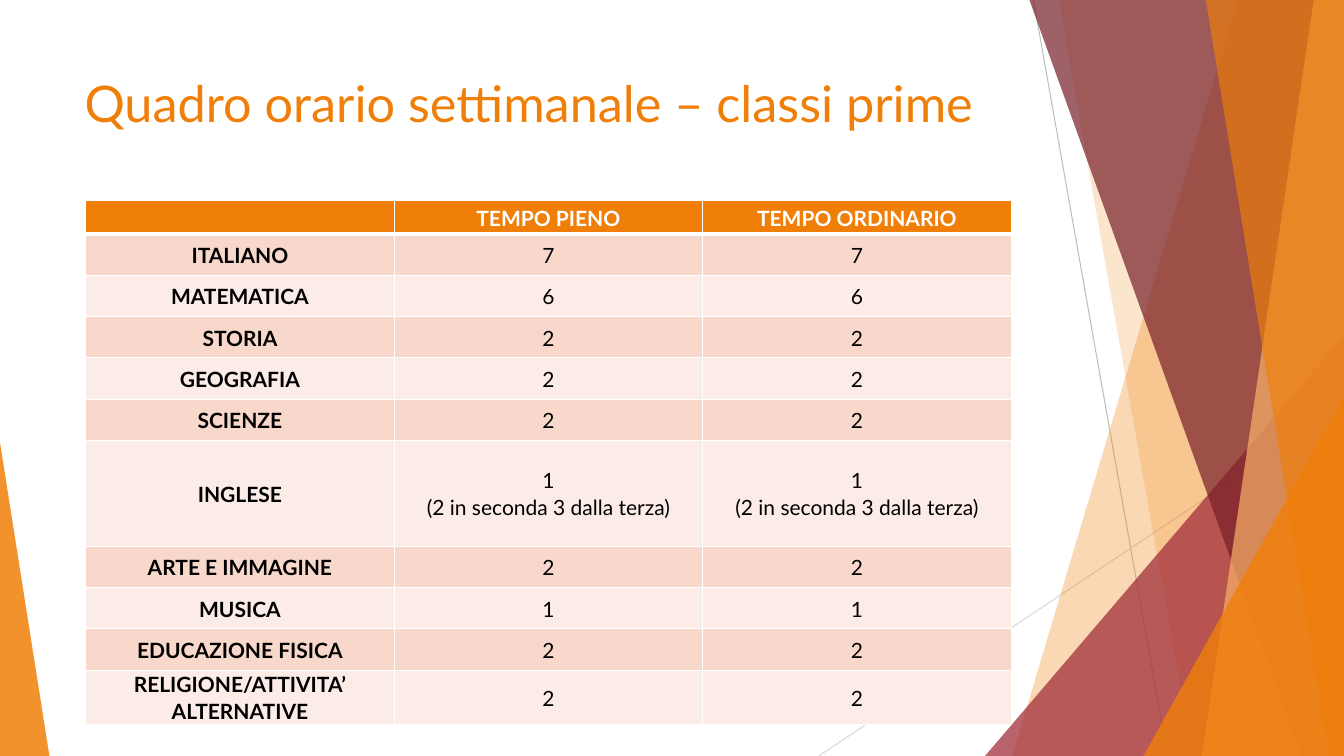
from dataclasses import dataclass

from lxml.etree import SubElement
from pptx import Presentation
from pptx.dml.color import RGBColor
from pptx.enum.shapes import MSO_CONNECTOR, MSO_SHAPE
from pptx.enum.text import MSO_ANCHOR, PP_ALIGN
from pptx.oxml import parse_xml
from pptx.oxml.ns import nsdecls, qn
from pptx.util import Inches, Pt

WIDTH, HEIGHT = 13.33, 7.5


@dataclass(frozen=True)
class Theme:
    """Colours, font and type sizes of the slide."""
    font: str = "Lato"
    title_size: int = 36
    table_size: int = 15
    orange: str = "F07F09"
    light_orange: str = "F9B268"
    red: str = "9F2936"
    dark_red: str = "771F28"
    grey: str = "BFBFBF"
    light_grey: str = "D9D9D9"
    band_dark: str = "F9D8CC"
    band_light: str = "FCECE7"
    white: str = "FFFFFF"
    black: str = "000000"


def apply_format(target, values):
    """Set every attribute named in values on target."""
    for name, value in values.items():
        setattr(target, name, value)


class SlideBuilder:
    """Draws styled elements on the current slide."""

    def __init__(self, slide, theme):
        self.slide = slide
        self.theme = theme

    def line(self, start, end, color):
        """Draw a thin straight line."""
        connector = self.slide.shapes.add_connector(
            MSO_CONNECTOR.STRAIGHT, *map(Inches, start + end))
        connector.line.width = Pt(0.75)
        connector.line.color.rgb = RGBColor.from_string(color)
        SubElement(connector._element.spPr, qn("a:effectLst"))

    def paint(self, shape, color, opacity):
        """Give a shape a translucent fill without outline or shadow."""
        shape.shadow.inherit = False
        shape.line.fill.background()
        shape.fill.solid()
        shape.fill.fore_color.rgb = RGBColor.from_string(color)
        color_element = shape._element.spPr.find(qn("a:solidFill"))[0]
        SubElement(color_element, qn("a:alpha"), val=str(opacity * 1000))

    def ribbon(self, top_left, bottom_left, color, opacity):
        """Draw a full-height band reaching the right edge of the slide."""
        corners = [(top_left, 0), (WIDTH, 0), (WIDTH, HEIGHT), (bottom_left, HEIGHT)]
        points = [(Inches(x), Inches(y)) for x, y in corners]
        builder = self.slide.shapes.build_freeform(*points[0])
        builder.add_line_segments(points[1:], close=True)
        self.paint(builder.convert_to_shape(), color, opacity)

    def corner(self, left, top, width, apex, color, opacity):
        """Draw a triangle standing on the bottom edge of the slide."""
        shape = self.slide.shapes.add_shape(
            MSO_SHAPE.ISOSCELES_TRIANGLE,
            *map(Inches, (left, top, width, HEIGHT - top)))
        shape.adjustments[0] = apex
        self.paint(shape, color, opacity)

    def styled_run(self, paragraph, text, size, color, bold=False):
        """Add a styled run to a paragraph."""
        run = paragraph.add_run()
        run.text = text
        apply_format(run.font, {"name": self.theme.font, "size": Pt(size), "bold": bold})
        run.font.color.rgb = RGBColor.from_string(color)

    def title(self, text, box):
        """Add the slide title."""
        frame = self.slide.shapes.add_textbox(*map(Inches, box)).text_frame
        apply_format(frame, {"word_wrap": True, "vertical_anchor": MSO_ANCHOR.TOP})
        self.styled_run(frame.paragraphs[0], text, self.theme.title_size, self.theme.orange)

    def borders(self, cell, widths):
        """Draw white cell borders with the given widths in points."""
        properties = cell._tc.get_or_add_tcPr()
        for index, (side, width) in enumerate(widths.items()):
            properties.insert(index, parse_xml(
                f'<a:ln{side} {nsdecls("a")} w="{Pt(width)}"><a:solidFill>'
                f'<a:srgbClr val="{self.theme.white}"/></a:solidFill></a:ln{side}>'))

    def cell(self, cell, text, fill, color, bold, widths):
        """Fill one table cell with centred text."""
        apply_format(cell, {
            "margin_left": Inches(0.07), "margin_right": Inches(0.07),
            "margin_top": 0, "margin_bottom": 0,
            "vertical_anchor": MSO_ANCHOR.MIDDLE})
        cell.fill.solid()
        cell.fill.fore_color.rgb = RGBColor.from_string(fill)
        self.borders(cell, widths)
        frame = cell.text_frame
        for index, line in enumerate(text.splitlines()):
            paragraph = frame.add_paragraph() if index else frame.paragraphs[0]
            apply_format(paragraph, {"alignment": PP_ALIGN.CENTER, "line_spacing": 1.07})
            self.styled_run(paragraph, line, self.theme.table_size, color, bold)

    def table(self, rows, heights, column_width, left, top):
        """Add the banded timetable with a coloured header row."""
        theme = self.theme
        columns = len(rows[0])
        table = self.slide.shapes.add_table(
            len(rows), columns, Inches(left), Inches(top),
            Inches(column_width * columns), Inches(sum(heights))).table
        for column in table.columns:
            column.width = Inches(column_width)
        for row, (values, height) in enumerate(zip(rows, heights)):
            table.rows[row].height = Inches(height)
            header = row == 0
            band = theme.band_dark if row % 2 else theme.band_light
            widths = {"L": 1, "R": 1, "T": 3 if row == 1 else 1, "B": 3 if header else 1}
            for column, text in enumerate(values):
                self.cell(table.cell(row, column), text,
                          theme.orange if header else band,
                          theme.white if header else theme.black,
                          header or column == 0, widths)


def main():
    """Build and save the slide."""
    presentation = Presentation()
    apply_format(presentation, {"slide_width": Inches(WIDTH), "slide_height": Inches(HEIGHT)})
    theme = Theme()
    slide = presentation.slides.add_slide(presentation.slide_layouts[6])
    builder = SlideBuilder(slide, theme)

    builder.line((10.25, 0), (11.58, HEIGHT), theme.grey)
    builder.line((WIDTH, 4.03), (8.12, HEIGHT), theme.light_grey)
    builder.ribbon(12.28, 10.04, theme.orange, 30)
    builder.ribbon(10.5, 11.83, theme.orange, 20)
    builder.corner(9.77, 3.33, 3.56, 1, theme.red, 72)
    builder.ribbon(10.21, 12.91, theme.dark_red, 70)
    builder.ribbon(13.03, 11.92, theme.light_orange, 70)
    builder.ribbon(11.96, 13.18, theme.orange, 65)
    builder.corner(11.34, 3.93, 1.99, 1, theme.orange, 80)
    builder.corner(0, 4.39, 0.49, 0, theme.orange, 85)

    builder.title("Quadro orario settimanale – classi prime", (0.74, 0.67, 9.4, 1.44))

    weekly_hours = {
        "ITALIANO": "7",
        "MATEMATICA": "6",
        "STORIA": "2",
        "GEOGRAFIA": "2",
        "SCIENZE": "2",
        "INGLESE": "1\n(2 in seconda 3 dalla terza)",
        "ARTE E IMMAGINE": "2",
        "MUSICA": "1",
        "EDUCAZIONE FISICA": "2",
        "RELIGIONE/ATTIVITA’ ALTERNATIVE": "2",
    }
    rows = [("", "TEMPO PIENO", "TEMPO ORDINARIO")]
    rows += [(subject, hours, hours) for subject, hours in weekly_hours.items()]
    heights = [0.33] + [0.41] * 5 + [1.05] + [0.41] * 3 + [0.54]
    builder.table(rows, heights, 3.06, 0.85, 1.99)

    presentation.save("out.pptx")


if __name__ == "__main__":
    main()
